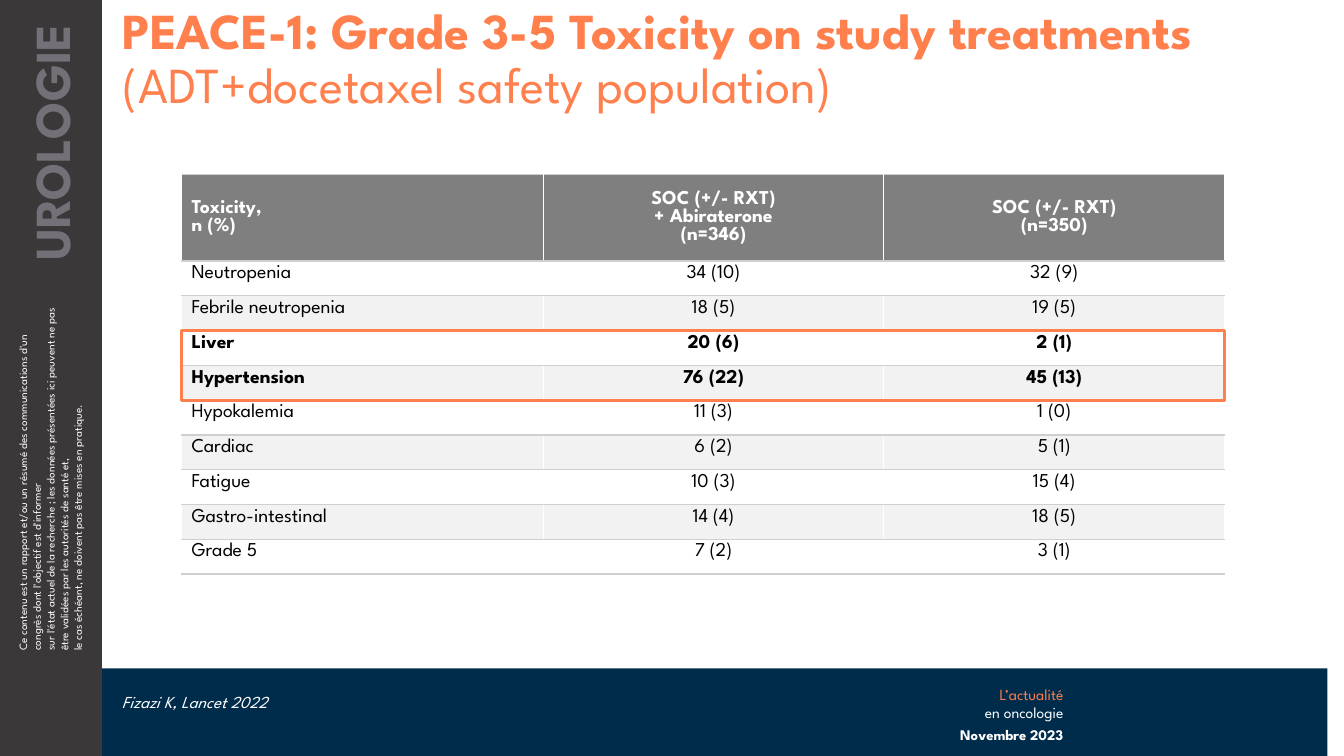
"""Build the PEACE-1 toxicity slide."""
import pptx
import pptx.dml.color
import pptx.enum.shapes
import pptx.enum.text
import pptx.oxml
import pptx.oxml.ns
import pptx.util

Pt = pptx.util.Pt
Align = pptx.enum.text.PP_ALIGN
Anchor = pptx.enum.text.MSO_ANCHOR

FONT = "League Spartan"
ORANGE, WHITE, BLACK = "FF7F4D", "FFFFFF", "000000"
NAVY, DARK, GREY = "002C4C", "3A3839", "737078"
HEAD, BAND, RULE = "7F7F7F", "F2F2F2", "D0CECE"

NOTICE = [
    "Ce contenu est un rapport et/ou un résumé des communications d'un congrès dont l'objectif est d'informer",
    "sur l'état actuel de la recherche ; les données présentées ici peuvent ne pas être validées par les autorités de santé et,",
    "le cas échéant, ne doivent pas être mises en pratique.",
]
TITLE = [
    ("PEACE-1: Grade 3-5 Toxicity on study treatments", {"bold": True}),
    "(ADT+docetaxel safety population)",
]
ISSUE = [("L’actualité", {"color": ORANGE}), "en oncologie"]
ROWS = [
    ("Toxicity,\nn (%)", "SOC (+/- RXT)\n+ Abiraterone\n(n=346)", "SOC (+/- RXT)\n(n=350)"),
    ("Neutropenia", "34 (10)", "32 (9)"),
    ("Febrile neutropenia", "18 (5)", "19 (5)"),
    ("Liver", "20 (6)", "2 (1)"),
    ("Hypertension", "76 (22)", "45 (13)"),
    ("Hypokalemia", "11 (3)", "1 (0)"),
    ("Cardiac", "6 (2)", "5 (1)"),
    ("Fatigue", "10 (3)", "15 (4)"),
    ("Gastro-intestinal", "14 (4)", "18 (5)"),
    ("Grade 5", "7 (2)", "3 (1)"),
]
KEY = ("Liver", "Hypertension")
COLS = (258.4, 243.4, 243.4)
LEFT, TOP, HEAD_H, ROW_H = 129.6, 124.5, 62, 24.85


def paint(target, color):
    target.solid()
    target.fore_color.rgb = pptx.dml.color.RGBColor.from_string(color)


def write(frame, lines, size=14, color=WHITE, bold=False, italic=False, align=Align.LEFT, lead=1.22):
    for num, line in enumerate(lines):
        text, extra = (line, {}) if isinstance(line, str) else line
        para = frame.paragraphs[0] if num == 0 else frame.add_paragraph()
        para.alignment = align
        para.line_spacing = Pt(round(size * lead, 1))
        run = para.add_run()
        run.text = text
        font = run.font
        font.name, font.size, font.italic = FONT, Pt(size), italic
        font.bold = extra.get("bold", bold)
        paint(font.fill, extra.get("color", color))


def label(slide, box, lines, inset=(7.2, 7.2), turn=0, anchor=Anchor.TOP, **style):
    shape = slide.shapes.add_textbox(*map(Pt, box))
    shape.rotation = turn
    frame = shape.text_frame
    frame.word_wrap = True
    frame.vertical_anchor = anchor
    frame.margin_left, frame.margin_right = map(Pt, inset)
    write(frame, lines, **style)


def block(slide, box, fill=None, line=None):
    shape = slide.shapes.add_shape(pptx.enum.shapes.MSO_SHAPE.RECTANGLE, *map(Pt, box))
    shape.shadow.inherit = False
    if fill:
        paint(shape.fill, fill)
    else:
        shape.fill.background()
    if line:
        paint(shape.line.fill, line)
        shape.line.width = Pt(2.25)
    else:
        shape.line.fill.background()


def rule(cell, sides):
    props = cell._tc.get_or_add_tcPr()
    for spot, side in enumerate(sides):
        edge = pptx.oxml.parse_xml(
            f'<a:{side} {pptx.oxml.ns.nsdecls("a")} w="12700"><a:solidFill>'
            f'<a:srgbClr val="{RULE}"/></a:solidFill></a:{side}>')
        props.insert(spot, edge)


def grid(slide):
    high = HEAD_H + ROW_H * (len(ROWS) - 1)
    box = map(Pt, (LEFT, TOP, sum(COLS), high))
    table = slide.shapes.add_table(len(ROWS), len(COLS), *box).table
    table.horz_banding = False
    for col, width in zip(table.columns, COLS):
        col.width = Pt(width)
    for r, row in enumerate(ROWS):
        table.rows[r].height = Pt(ROW_H if r else HEAD_H)
        fill = HEAD if r == 0 else WHITE if r % 2 else BAND
        for c, text in enumerate(row):
            cell = table.cell(r, c)
            cell.margin_top = cell.margin_bottom = Pt(2.9)
            cell.vertical_anchor = Anchor.TOP if r else Anchor.MIDDLE
            paint(cell.fill, fill)
            rule(cell, ("lnT", "lnB"))
            write(cell.text_frame, text.split("\n"), color=BLACK if r else WHITE,
                  bold=r == 0 or row[0] in KEY,
                  align=Align.CENTER if c else Align.LEFT, lead=0.92)
    first = [row[0] for row in ROWS].index(KEY[0])
    top = TOP + HEAD_H + ROW_H * (first - 1)
    block(slide, (LEFT, top, sum(COLS), ROW_H * len(KEY)), line=ORANGE)


def main():
    deck = pptx.Presentation()
    deck.slide_width, deck.slide_height = Pt(960), Pt(540)
    slide = deck.slides.add_slide(deck.slide_layouts[6])
    block(slide, (61.2, 477.4, 887, 62.6), fill=NAVY)
    block(slide, (0, 0, 72.9, 540), fill=DARK)
    label(slide, (-94.3, 314.6, 259.2, 55.4), NOTICE, turn=270, size=8)
    label(slide, (-74.9, 85, 221, 51.1), ["UROLOGIE"], turn=270, inset=(7.2, 17.3),
          size=36, color=GREY, bold=True, align=Align.RIGHT)
    label(slide, (648.7, 485.3, 118.1, 33.8), ISSUE, size=11, align=Align.RIGHT)
    label(slide, (648.7, 516.2, 110.9, 19.4), ["Novembre 2023"], inset=(7.2, 0),
          size=10.5, bold=True, align=Align.RIGHT, lead=1.1)
    label(slide, (79.9, 477.4, 406, 49.4), ["Fizazi K, Lancet 2022"],
          anchor=Anchor.MIDDLE, size=12, italic=True, lead=1.1)
    label(slide, (73.4, 0, 886.3, 85), TITLE, inset=(14.4, 7.2),
          size=36, color=ORANGE, lead=1.08)
    grid(slide)
    deck.save("out.pptx")


if __name__ == "__main__":
    main()
